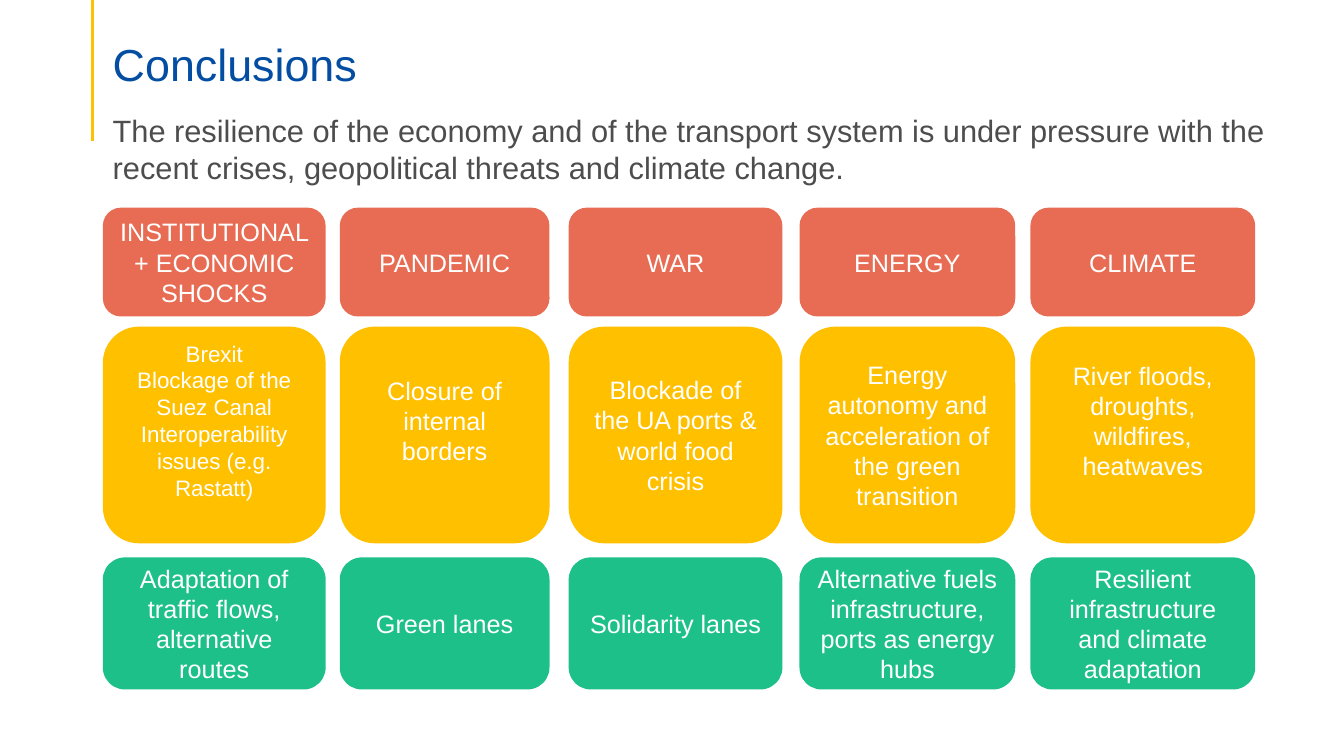
from dataclasses import dataclass
from lxml.etree import SubElement
from pptx import Presentation
from pptx.dml.color import RGBColor
from pptx.enum.shapes import MSO_CONNECTOR, MSO_SHAPE
from pptx.enum.text import MSO_ANCHOR, PP_ALIGN
from pptx.oxml.ns import qn
from pptx.util import Inches, Pt


@dataclass(frozen=True)
class Theme:
    font: str = "Arial"
    blue: str = "034EA2"
    grey: str = "4D4D4D"
    white: str = "FFFFFF"
    gold: str = "FFC000"
    coral: str = "E76C53"
    green: str = "1EC08A"
    title: int = 32
    lead: int = 22
    card: int = 18
    small: int = 16


THEME = Theme()
COLUMNS = [(1.02, 2.21), (3.37, 2.08), (5.64, 2.12), (7.93, 2.14), (10.22, 2.23)]
ROWS = [
    (2.06, 1.08, THEME.coral, [
        "INSTITUTIONAL + ECONOMIC SHOCKS", "PANDEMIC", "WAR", "ENERGY", "CLIMATE"]),
    (3.24, 2.15, THEME.gold, [
        "Brexit\nBlockage of the Suez Canal\nInteroperability issues (e.g. Rastatt)",
        "Closure of internal borders",
        "Blockade of the UA ports & world food crisis",
        "Energy autonomy and acceleration of the green transition",
        "River floods, droughts, wildfires, heatwaves"]),
    (5.53, 1.31, THEME.green, [
        "Adaptation of traffic flows, alternative routes",
        "Green lanes",
        "Solidarity lanes",
        "Alternative fuels infrastructure, ports as energy hubs",
        "Resilient infrastructure and climate adaptation"]),
]
RAISED = {(1, 0), (1, 1), (1, 4)}
SMALL = {(1, 0)}


def write(frame, text, size, color, align=PP_ALIGN.LEFT):
    frame.word_wrap = True
    frame.text = text
    for para in frame.paragraphs:
        para.alignment = align
        para.font.name = THEME.font
        para.font.size = Pt(size)
        para.font.color.rgb = RGBColor.from_string(color)


def add_text(slide, box, text, size, color):
    frame = slide.shapes.add_textbox(*map(Inches, box)).text_frame
    write(frame, text, size, color)
    return frame


def add_head(slide, left, top, width):
    edge = Inches(left - 0.1)
    rule = slide.shapes.add_connector(
        MSO_CONNECTOR.STRAIGHT, edge, Inches(top), edge, Inches(top + 1.4))
    rule.line.color.rgb = RGBColor.from_string(THEME.gold)
    rule.line.width = Pt(2.25)
    SubElement(rule.element.spPr, qn("a:effectLst"))
    title = add_text(slide, (left, top + 0.21, width - 0.43, 0.86),
                     "Conclusions", THEME.title, THEME.blue)
    title.vertical_anchor = MSO_ANCHOR.MIDDLE
    title.margin_bottom = 0
    title.paragraphs[0].line_spacing = 0.9
    add_text(slide, (left, top + 1.06, width, 1),
             "The resilience of the economy and of the transport system is under "
             "pressure with the recent crises, geopolitical threats and climate change.",
             THEME.lead, THEME.grey)


def add_card(slide, box, text, fill, size, raised):
    card = slide.shapes.add_shape(MSO_SHAPE.ROUNDED_RECTANGLE, *map(Inches, box))
    card.shadow.inherit = False
    card.fill.solid()
    card.fill.fore_color.rgb = RGBColor.from_string(fill)
    card.line.fill.background()
    frame = card.text_frame
    frame.vertical_anchor = MSO_ANCHOR.MIDDLE
    if raised:
        frame.margin_bottom = Inches(0.34)
    write(frame, text, size, THEME.white, PP_ALIGN.CENTER)


def add_grid(slide):
    for row, (top, height, fill, texts) in enumerate(ROWS):
        for col, ((left, width), text) in enumerate(zip(COLUMNS, texts)):
            size = THEME.small if (row, col) in SMALL else THEME.card
            add_card(slide, (left, top, width, height), text, fill, size,
                     (row, col) in RAISED)


def main():
    deck = Presentation()
    deck.slide_width = Inches(13.33)
    deck.slide_height = Inches(7.5)
    slide = deck.slides.add_slide(deck.slide_layouts[6])
    add_head(slide, 1.02, 0, 11.93)
    add_grid(slide)
    deck.save("out.pptx")


if __name__ == "__main__":
    main()
